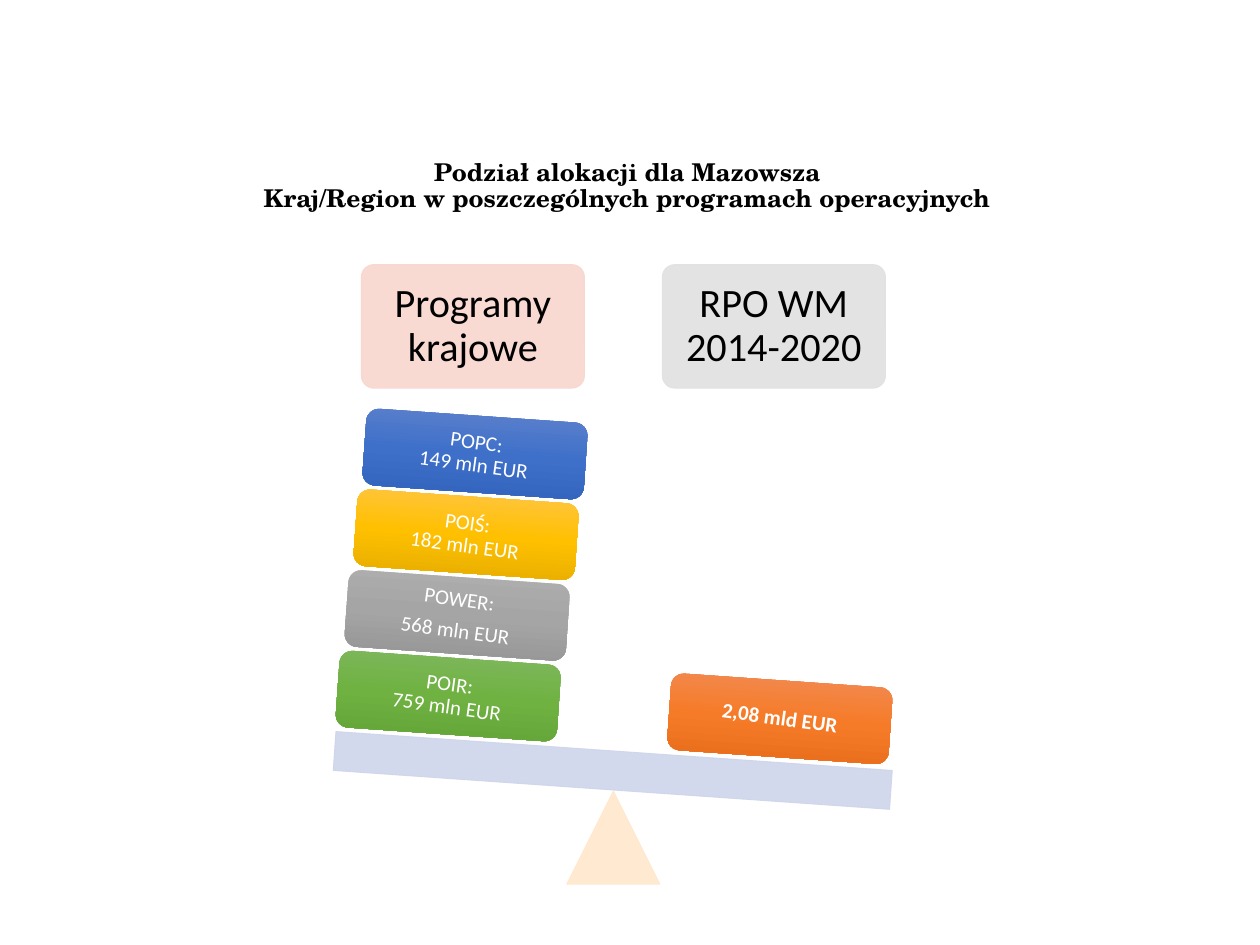
from lxml.etree import SubElement
from pptx import Presentation
from pptx.dml.color import RGBColor
from pptx.enum.shapes import MSO_SHAPE as Shape
from pptx.enum.text import MSO_ANCHOR as Anchor, PP_ALIGN as Align
from pptx.oxml.ns import qn
from pptx.util import Pt

# Content; a line break inside a paragraph is \v
TITLE = ("Podział alokacji dla Mazowsza\v"
         "Kraj/Region w poszczególnych programach operacyjnych")
HEADINGS = [("Programy krajowe", "F8D7CE", 206.5), ("RPO WM 2014-2020", "E1E1E1", 378.5)]
NATIONAL = [  # from the beam upwards
    (["POIR:\v759 mln EUR"], ("81B861", "6FB242", "62A336")),
    (["POWER:", "568 mln EUR"], ("AFAFAF", "A5A5A5", "939393")),
    (["POIŚ:\v182 mln EUR"], ("FFC64B", "FFC000", "E3AB00")),
    (["POPC:\v149 mln EUR"], ("6183CB", "3E70CA", "3062BB")),
]
REGIONAL = (["2,08 mld EUR"], ("F18C57", "F67B28", "E56C19"))

# Layout in points
TILT = 4
BLOCK_SIZE = (126.7, 43.9)
STACK_LEFT, STACK_TOP = 192.8, 375.8
STEP_X, STEP_Y = 5.1, -46.1
REGIONAL_AT = (382.3, 388.8)


def color(value):
    return RGBColor.from_string(value)


def add_text(paragraphs, at, size=12, font="Calibri", ink="FFFFFF", bold=False,
             inset=3.6, anchor=Anchor.MIDDLE, turn=0, after=0.42):
    box = page.shapes.add_textbox(*map(Pt, at))
    box.rotation = turn
    frame = box.text_frame
    frame.word_wrap = True
    frame.vertical_anchor = anchor
    frame.margin_left = frame.margin_right = Pt(inset)
    frame.margin_top = frame.margin_bottom = Pt(inset)
    for index, text in enumerate(paragraphs):
        para = frame.paragraphs[0] if index == 0 else frame.add_paragraph()
        para.text = text
        para.alignment = Align.CENTER
        para.line_spacing = 0.9
        para.space_after = Pt(round(size * after, 1))
        for span in para.runs:
            span.font.size = Pt(size)
            span.font.name = font
            span.font.bold = bold
            span.font.color.rgb = color(ink)


def add_flat(kind, at, fill, turn=0):
    """Slightly see-through shape with an outline of its own colour."""
    shape = page.shapes.add_shape(kind, *map(Pt, at))
    shape.shadow.inherit = False
    shape.rotation = turn
    shape.line.width = Pt(0.5)
    for paint in (shape.fill, shape.line.fill):
        paint.solid()
        paint.fore_color.rgb = color(fill)
    for tone in shape._element.spPr.iter(qn("a:srgbClr")):
        SubElement(tone, qn("a:alpha"), val="90000")
    return shape


def add_block(paragraphs, stops, left, top, bold=False):
    """Tilted block with a three-stop gradient and its label."""
    at = (left, top, *BLOCK_SIZE)
    shape = page.shapes.add_shape(Shape.ROUNDED_RECTANGLE, *map(Pt, at))
    shape.shadow.inherit = False
    shape.rotation = TILT
    shape.line.fill.background()
    shape.fill.gradient()
    shape.fill.gradient_angle = 270
    stop_list = shape._element.spPr.find(".//" + qn("a:gsLst"))
    for stop in list(stop_list):
        stop_list.remove(stop)
    for index, tone in enumerate(stops):
        stop = SubElement(stop_list, qn("a:gs"), pos=str(index * 50000))
        SubElement(stop, qn("a:srgbClr"), val=tone)
    add_text(paragraphs, at, bold=bold, turn=2 * TILT)


deck = Presentation()
deck.slide_width, deck.slide_height = Pt(720), Pt(540)
page = deck.slides.add_slide(deck.slide_layouts[6])

# Title
add_text([TITLE], (48.2, 87.8, 620.6, 73.4), size=14, font="TeX Gyre Schola",
         ink="000000", bold=True, anchor=Anchor.TOP, after=0)

# Headings
for text, fill, left in HEADINGS:
    at = (left, 151.2, 127.5, 70.6)
    add_flat(Shape.ROUNDED_RECTANGLE, at, fill).adjustments[0] = 0.1
    add_text([text], at, size=23, ink="000000", inset=7.2)

# Pivot and beam
add_flat(Shape.ISOSCELES_TRIANGLE, (323.9, 452, 53.2, 53.2), "FFE8CC")
add_flat(Shape.RECTANGLE, (190.8, 429.1, 318.7, 22.3), "CFD5EA", turn=TILT)

# Weights
add_block(*REGIONAL, *REGIONAL_AT, bold=True)
for level, (paragraphs, stops) in enumerate(NATIONAL):
    add_block(paragraphs, stops, STACK_LEFT + level * STEP_X, STACK_TOP + level * STEP_Y)

deck.save("out.pptx")
